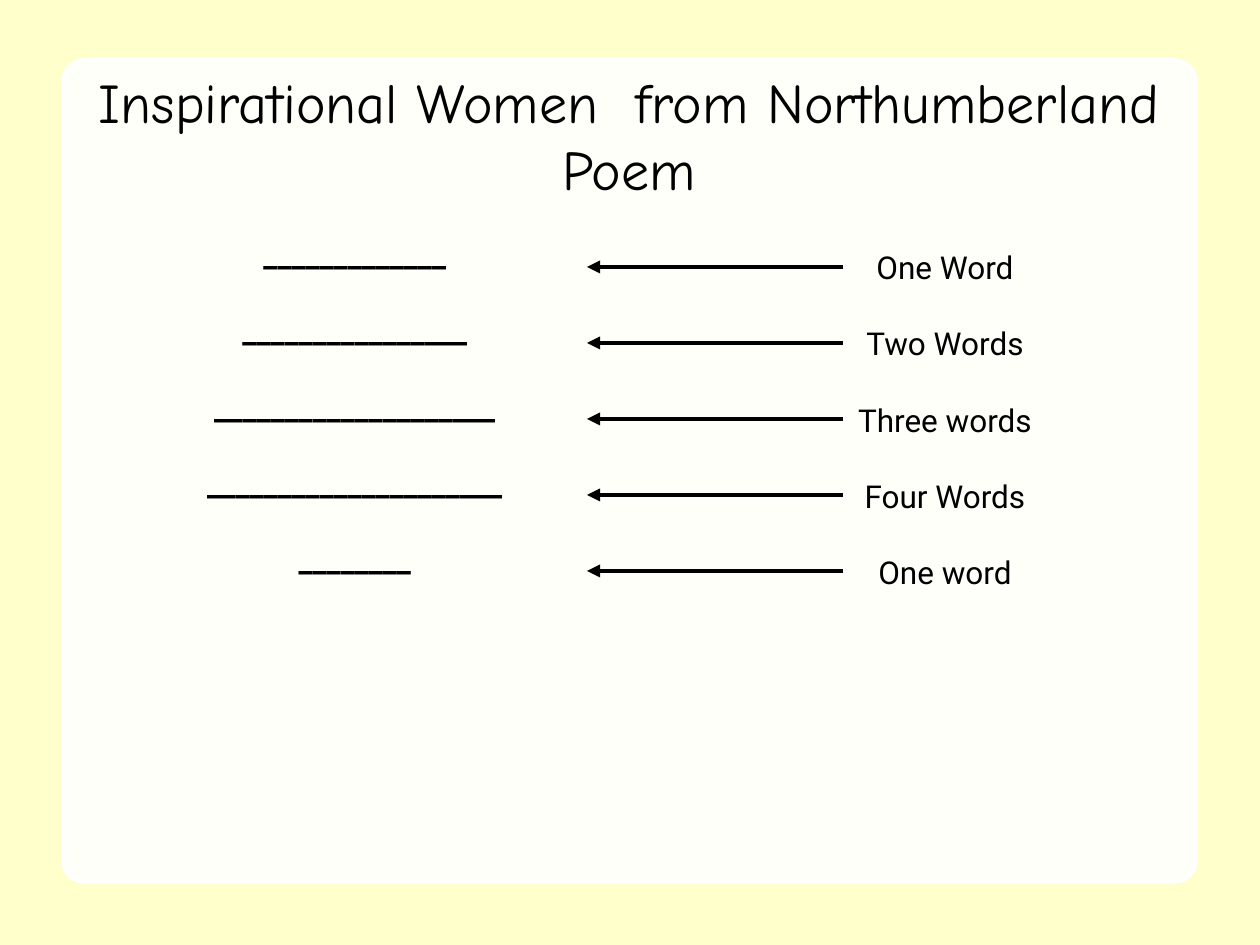
from lxml import etree
from pptx import Presentation
from pptx import util as u
from pptx.dml.color import RGBColor
from pptx.enum import shapes, text
from pptx.oxml.ns import qn

BLACK, WHITE, CREAM = "000000", "FFFFFF", "FFFFCC"
ROWS = [
    (13, "One Word"),
    (16, "Two Words"),
    (20, "Three words"),
    (21, "Four Words"),
    (8, "One word"),
]
ROW_TOP, ROW_PITCH = 267, 76


def px(length):
    """Turn pixels into EMU at 126 pixels to the inch."""
    return u.Emu(round(length * 914400 / 126))


def colour(code):
    """Return the colour for a hex string."""
    return RGBColor.from_string(code)


def write(para, words, font, size, bold=False):
    """Add one centred black run to a paragraph."""
    para.alignment = text.PP_ALIGN.CENTER
    span = para.add_run()
    span.text = words
    span.font.name = font
    span.font.size = u.Pt(size)
    span.font.bold = bold
    span.font.color.rgb = colour(BLACK)


def add_panel(page, left, top, width, height):
    """Add the slightly see-through rounded panel."""
    panel = page.shapes.add_shape(
        shapes.MSO_SHAPE.ROUNDED_RECTANGLE,
        px(left), px(top), px(width), px(height))
    panel.adjustments[0] = 0.026
    panel.shadow.inherit = False
    panel.fill.solid()
    panel.fill.fore_color.rgb = colour(WHITE)
    panel.line.color.rgb = colour(WHITE)
    panel.line.width = u.Pt(2)
    shade = panel.fill._xPr.find(qn("a:solidFill"))[0]
    etree.SubElement(shade, qn("a:alpha"), val="90000")
    tree = page.shapes._spTree
    tree.remove(panel._element)
    tree.insert(2, panel._element)


def set_title(page, words, left, top, width, height):
    """Place and fill the title placeholder."""
    title = page.shapes.title
    title.left, title.top = px(left), px(top)
    title.width, title.height = px(width), px(height)
    frame = title.text_frame
    frame.auto_size = text.MSO_AUTO_SIZE.NONE
    frame.vertical_anchor = text.MSO_ANCHOR.MIDDLE
    write(frame.paragraphs[0], words, "Comic Neue", 32)


def add_column(page, lines, left, top, width, height, bold=False):
    """Add a text box with one evenly spaced paragraph per line."""
    box = page.shapes.add_textbox(px(left), px(top), px(width), px(height))
    frame = box.text_frame
    frame.word_wrap = True
    frame.auto_size = text.MSO_AUTO_SIZE.SHAPE_TO_FIT_TEXT
    for index, words in enumerate(lines):
        para = frame.add_paragraph() if index else frame.paragraphs[0]
        para.space_before = u.Pt(22 if index else 0)
        write(para, words, "Roboto", 18, bold)


def add_arrow(page, start, end, y):
    """Add a level arrow that points at its end."""
    arrow = page.shapes.add_connector(
        shapes.MSO_CONNECTOR.STRAIGHT, px(start), px(y), px(end), px(y))
    arrow.line.color.rgb = colour(BLACK)
    arrow.line.width = u.Pt(2.5)
    etree.SubElement(arrow.line._get_or_add_ln(), qn("a:tailEnd"), type="triangle")
    etree.SubElement(arrow._element.spPr, qn("a:effectLst"))


def main():
    """Build and save the poem slide."""
    deck = Presentation()
    deck.slide_width, deck.slide_height = px(1260), px(945)
    page = deck.slides.add_slide(deck.slide_layouts[5])
    page.background.fill.solid()
    page.background.fill.fore_color.rgb = colour(CREAM)

    add_panel(page, 63, 60, 1133, 822)
    set_title(page, "Inspirational Women  from Northumberland Poem", 63, 66, 1133, 137)
    add_column(page, [label for _, label in ROWS], 630, 242, 630, 357)
    for row in range(len(ROWS)):
        add_arrow(page, 843, 587, ROW_TOP + row * ROW_PITCH)
    add_column(page, ["_" * count for count, _ in ROWS], 40, 229, 630, 407, bold=True)

    deck.save("out.pptx")


if __name__ == "__main__":
    main()
